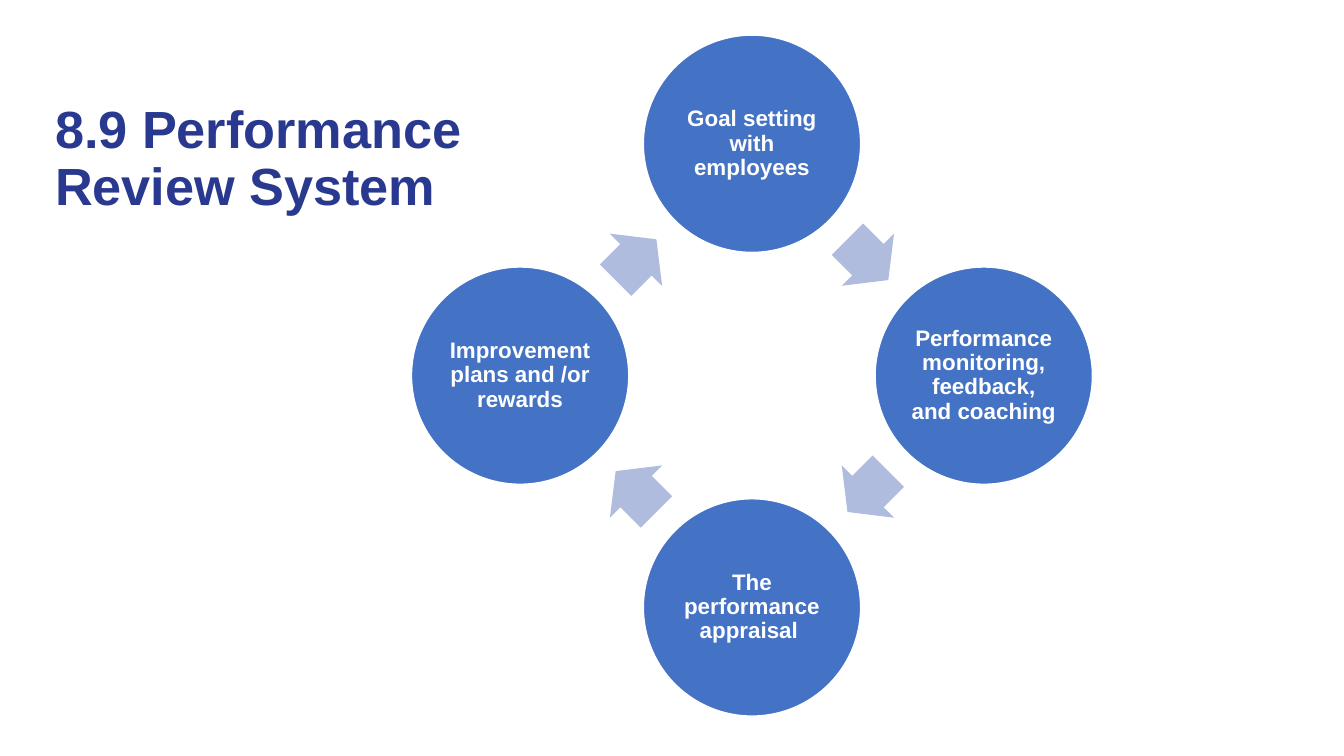
from dataclasses import dataclass
from math import cos, degrees, pi, sin

from pptx import Presentation
from pptx.dml.color import RGBColor
from pptx.enum.shapes import MSO_SHAPE as Shape
from pptx.enum.text import MSO_ANCHOR as Anchor, PP_ALIGN as Align
from pptx.util import Inches, Pt


@dataclass(frozen=True)
class Theme:
    font: str = "Arial"
    title_color: str = "2A3990"
    circle_fill: str = "4472C4"
    arrow_fill: str = "B0BCDE"
    white: str = "FFFFFF"
    title_size: float = 28
    step_size: float = 12
    line_spacing: float = 0.9


THEME = Theme()
STEPS = [
    "Goal setting with employees",
    "Performance monitoring, feedback, and coaching",
    "The performance appraisal ",
    "Improvement plans and /or rewards",
]


def write(frame, text, *, size, color, align=Align.LEFT, anchor=Anchor.MIDDLE,
          inset_x=0.1, inset_y=0.05):
    frame.word_wrap = True
    frame.vertical_anchor = anchor
    frame.margin_left = frame.margin_right = Inches(inset_x)
    frame.margin_top = frame.margin_bottom = Inches(inset_y)
    line = frame.paragraphs[0]
    line.alignment = align
    line.line_spacing = THEME.line_spacing
    run = line.add_run()
    run.text = text
    run.font.name = THEME.font
    run.font.size = Pt(size)
    run.font.bold = True
    run.font.color.rgb = RGBColor.from_string(color)


def centered_box(x, y, width, height):
    """Return left, top, width and height of a box centred on (x, y)."""
    return [Inches(value)
            for value in (x - width / 2, y - height / 2, width, height)]


def add_filled(slide, preset, box, fill):
    shape = slide.shapes.add_shape(preset, *box)
    shape.shadow.inherit = False
    shape.fill.solid()
    shape.fill.fore_color.rgb = RGBColor.from_string(fill)
    return shape


def add_title(slide, left, top, width, height):
    title = slide.shapes.title
    title.left, title.top = Inches(left), Inches(top)
    title.width, title.height = Inches(width), Inches(height)
    write(title.text_frame, "8.9 Performance Review System",
          size=THEME.title_size, color=THEME.title_color, anchor=Anchor.BOTTOM)


def add_step(slide, text, x, y, diameter):
    circle = add_filled(slide, Shape.OVAL,
                        centered_box(x, y, diameter, diameter),
                        THEME.circle_fill)
    circle.line.color.rgb = RGBColor.from_string(THEME.white)
    circle.line.width = Pt(1)
    label_size = diameter * 0.71
    label = slide.shapes.add_textbox(
        *centered_box(x, y, label_size, label_size))
    write(label.text_frame, text, size=THEME.step_size, color=THEME.white,
          align=Align.CENTER, inset_x=0.02, inset_y=0.02)


def add_arrow(slide, x, y, rotation):
    arrow = add_filled(slide, Shape.RIGHT_ARROW,
                       centered_box(x, y, 0.43, 0.55), THEME.arrow_fill)
    arrow.line.fill.background()
    arrow.adjustments[0], arrow.adjustments[1] = 0.6, 0.5
    arrow.rotation = rotation


def add_cycle(slide, steps, left, top, size, diameter=1.62):
    """Place the steps clockwise from the top, each followed by an arrow."""
    center_x, center_y = left + size / 2, top + size / 2
    radius = (size - diameter) / 2
    turn = 2 * pi / len(steps)
    arrow_radius = radius * cos(turn / 2)
    for index, text in enumerate(steps):
        angle = index * turn
        add_step(slide, text, center_x + radius * sin(angle),
                 center_y - radius * cos(angle), diameter)
        halfway = angle + turn / 2
        add_arrow(slide, center_x + arrow_radius * sin(halfway),
                  center_y - arrow_radius * cos(halfway), degrees(halfway))


def main():
    deck = Presentation()
    deck.slide_width, deck.slide_height = Inches(10), Inches(10 * 9 / 16)
    slide = deck.slides.add_slide(deck.slide_layouts.get_by_name("Title Only"))
    add_title(slide, 0.31, 0.66, 3.89, 1)
    add_cycle(slide, STEPS, left=3.06, top=0.26, size=5.07)
    deck.save("out.pptx")


if __name__ == "__main__":
    main()
